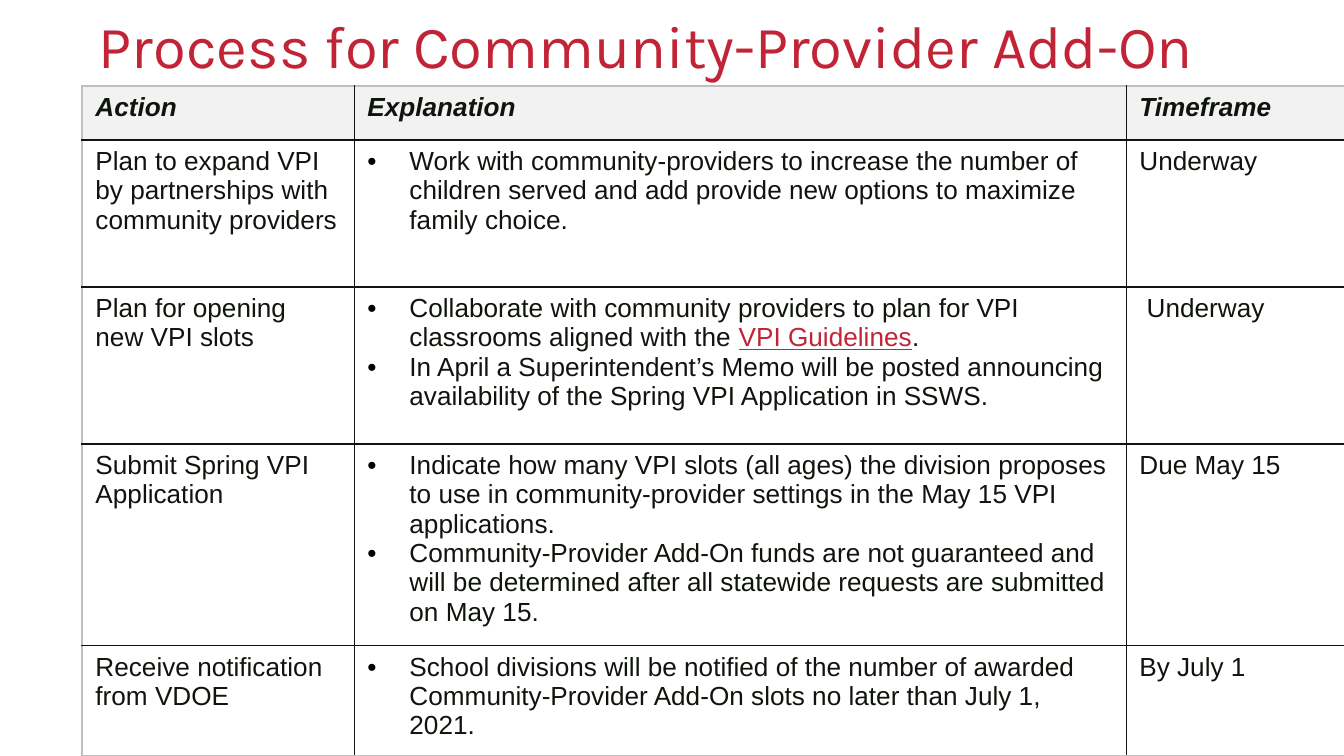
from pptx import Presentation
from pptx.dml.color import RGBColor
from pptx.enum.text import MSO_ANCHOR as Anchor
from pptx.oxml.ns import qn
from pptx.util import Pt
from lxml.etree import SubElement

PX = 914400 / 134.4
INK, RED, GREY, HEADER, WHITE = "0F150D", "C12436", "BFBFBF", "F2F2F2", "FFFFFF"
COLUMNS = [272, 772, 220]
HEIGHTS = [54, 147, 157, 189, 110]
LINK = "VPI Guidelines"
ROWS = [
    ("Action", ["Explanation"], "Timeframe"),
    ("Plan to expand VPI by partnerships with community providers",
     ["Work with community-providers to increase the number of children served "
      "and add provide new options to maximize family choice."],
     "Underway"),
    ("Plan for opening new VPI slots",
     ["Collaborate with community providers to plan for VPI classrooms aligned "
      "with the VPI Guidelines.",
      "In April a Superintendent’s Memo will be posted announcing availability "
      "of the Spring VPI Application in SSWS."],
     " Underway"),
    ("Submit Spring VPI Application",
     ["Indicate how many VPI slots (all ages) the division proposes to use in "
      "community-provider settings in the May 15 VPI applications.",
      "Community-Provider Add-On funds are not guaranteed and will be determined "
      "after all statewide requests are submitted on May 15."],
     "Due May 15"),
    ("Receive notification from VDOE",
     ["School divisions will be notified of the number of awarded "
      "Community-Provider Add-On slots no later than July 1, 2021."],
     "By July 1"),
]


def px(value):
    return round(value * PX)


def color(value):
    return RGBColor.from_string(value)


def set_font(font, name, size, ink):
    font.name = name
    font.size = Pt(size)
    font.color.rgb = color(ink)


def add_title(slide, text):
    box = slide.shapes.add_textbox(px(89), 0, px(1259), px(98))
    frame = box.text_frame
    frame.word_wrap = True
    frame.vertical_anchor = Anchor.MIDDLE
    frame.margin_left = frame.margin_right = px(10)
    frame.margin_top = frame.margin_bottom = px(5)
    paragraph = frame.paragraphs[0]
    paragraph.text = text
    paragraph.line_spacing = 0.9
    set_font(paragraph.font, "Karla", 32, RED)


def add_bullet(paragraph):
    properties = paragraph._p.get_or_add_pPr()
    properties.set("marL", str(px(42)))
    properties.set("indent", str(-px(42)))
    bullet_color = SubElement(properties, qn("a:buClr"))
    SubElement(bullet_color, qn("a:srgbClr"), val="000000")
    SubElement(properties, qn("a:buFont"), typeface="Arial")
    SubElement(properties, qn("a:buChar"), char="•")


def add_text(paragraph, text):
    before, link, after = text.partition(LINK)
    for part in filter(None, (before, link, after)):
        run = paragraph.add_run()
        run.text = part
        if part == LINK:
            run.font.underline = True
            run.font.color.rgb = color(RED)


def add_border(cell, side, width, ink):
    line = SubElement(cell._tc.get_or_add_tcPr(), qn(f"a:ln{side}"), w=str(Pt(width)))
    fill = SubElement(line, qn("a:solidFill"))
    SubElement(fill, qn("a:srgbClr"), val=ink)


def horizontal_border(edge):
    if edge in (0, len(ROWS)):
        return 1, GREY
    return (0.5 if edge == len(ROWS) - 1 else 1), INK


def vertical_border(edge):
    return (1, GREY) if edge in (0, len(COLUMNS)) else (0.5, INK)


def fill_cell(cell, row, column, texts):
    frame = cell.text_frame
    for index, text in enumerate(texts):
        paragraph = frame.add_paragraph() if index else frame.paragraphs[0]
        if row and column == 1:
            add_bullet(paragraph)
        set_font(paragraph.font, "Arial", 14, INK)
        paragraph.font.bold = paragraph.font.italic = row == 0
        add_text(paragraph, text)
    add_border(cell, "L", *vertical_border(column))
    add_border(cell, "R", *vertical_border(column + 1))
    add_border(cell, "T", *horizontal_border(row))
    add_border(cell, "B", *horizontal_border(row + 1))
    cell.fill.solid()
    cell.fill.fore_color.rgb = color(WHITE if row else HEADER)


def add_process_table(slide):
    frame = slide.shapes.add_table(len(ROWS), len(COLUMNS), px(82), px(86),
                                   px(sum(COLUMNS)), px(sum(HEIGHTS)))
    table = frame.table
    for column, width in zip(table.columns, COLUMNS):
        column.width = px(width)
    for row, height in zip(table.rows, HEIGHTS):
        row.height = px(height)
    for row, (action, explanation, timeframe) in enumerate(ROWS):
        for column, texts in enumerate(([action], explanation, [timeframe])):
            fill_cell(table.cell(row, column), row, column, texts)


def main():
    presentation = Presentation()
    presentation.slide_width = px(1344)
    presentation.slide_height = px(756)
    slide = presentation.slides.add_slide(presentation.slide_layouts[6])
    add_title(slide, "Process for Community-Provider Add-On")
    add_process_table(slide)
    presentation.save("out.pptx")


if __name__ == "__main__":
    main()
